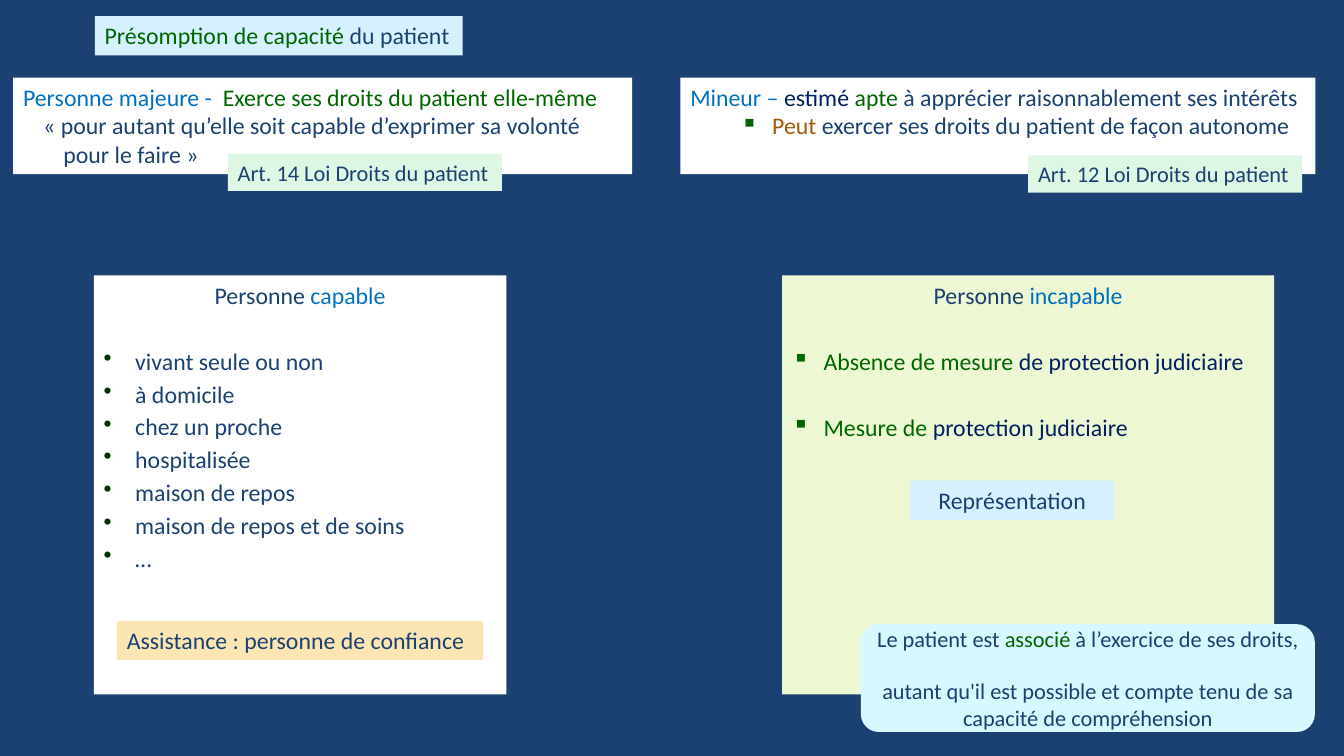
import pptx
import pptx.dml.color
import pptx.enum.shapes
import pptx.enum.text
import pptx.oxml
import pptx.oxml.ns
import pptx.util

Pt = pptx.util.Pt
SHAPE = pptx.enum.shapes.MSO_SHAPE
ALIGN = pptx.enum.text.PP_ALIGN
ANCHOR = pptx.enum.text.MSO_ANCHOR
FIT = pptx.enum.text.MSO_AUTO_SIZE

NAVY, BLUE, GREEN, INK, BROWN = "1A4171", "0070C0", "006600", "002060", "A3580D"
WHITE, SKY, MINT, LIME, SAND, AQUA = "FFFFFF", "D6F0FF", "DEF6E4", "EDF7D3", "FBE6B3", "D7F8FF"
BULLET_INDENT = 22.5
LIST_GAP = 3
WIDE_GAP = 27


def apply_format(target, values):
    for name, value in values.items():
        setattr(target, name, value)


def set_colour(colour_format, colour):
    colour_format.rgb = pptx.dml.color.RGBColor.from_string(colour)


def paint(fill, colour):
    fill.solid()
    set_colour(fill.fore_color, colour)


def line(*runs, align=ALIGN.LEFT, before=0, level=0, indent=(0, 0), bullet=None):
    return {
        "runs": runs,
        "format": {"alignment": align, "space_before": Pt(before), "level": level},
        "indent": indent,
        "bullet": bullet,
    }


def item(*runs, bullet, before=LIST_GAP, left=BULLET_INDENT, level=0):
    return line(*runs, before=before, level=level, indent=(left, -BULLET_INDENT), bullet=bullet)


def set_indent(paragraph, left, first):
    properties = paragraph._p.get_or_add_pPr()
    properties.set("marL", str(Pt(left)))
    properties.set("indent", str(Pt(first)))


def set_bullet(paragraph, character, colour):
    namespace = pptx.oxml.ns.nsdecls("a")
    properties = paragraph._p.get_or_add_pPr()
    for xml in (
        f'<a:buClr {namespace}><a:srgbClr val="{colour}"/></a:buClr>',
        f'<a:buChar {namespace} char="{character}"/>',
    ):
        properties.append(pptx.oxml.parse_xml(xml))


def write_line(paragraph, content, size):
    apply_format(paragraph, content["format"])
    set_indent(paragraph, *content["indent"])
    if content["bullet"]:
        set_bullet(paragraph, *content["bullet"])
    for text, colour in content["runs"]:
        run = paragraph.add_run()
        run.text = text
        apply_format(run.font, {"name": "Calibri", "size": Pt(size)})
        set_colour(run.font.color, colour)


def add_box(slide, bounds, colour, lines, size=17, wrap=True,
            kind=SHAPE.RECTANGLE, anchor=ANCHOR.TOP, fit=FIT.SHAPE_TO_FIT_TEXT):
    shape = slide.shapes.add_shape(kind, *map(Pt, bounds))
    shape.shadow.inherit = False
    paint(shape.fill, colour)
    shape.line.fill.background()
    frame = shape.text_frame
    apply_format(frame, {"word_wrap": wrap, "auto_size": fit, "vertical_anchor": anchor})
    for index, content in enumerate(lines):
        paragraph = frame.add_paragraph() if index else frame.paragraphs[0]
        write_line(paragraph, content, size)


def add_label(slide, bounds, colour, *runs, size=17):
    add_box(slide, bounds, colour, [line(*runs)], size=size, wrap=False)


def add_presumption(slide):
    add_label(slide, (67.7, 11.5, 262.8, 28.1), SKY,
              ("Présomption de capacité ", GREEN), ("du patient", NAVY))
    add_box(slide, (9.4, 55.4, 442.1, 69.1), WHITE, [
        line(("Personne majeure -  ", BLUE), ("Exerce ses droits du patient elle-même", GREEN)),
        line(("« pour autant qu’elle soit capable d’exprimer sa volonté pour le faire »", NAVY),
             indent=(28.8, -14.4)),
    ])


def add_capable(slide):
    situations = ("vivant seule ou non", "à domicile", "chez un proche", "hospitalisée",
                  "maison de repos", "maison de repos et de soins", "…")
    lines = [line(("Personne ", NAVY), ("capable", BLUE), align=ALIGN.CENTER)]
    for index, situation in enumerate(situations):
        lines.append(item((situation, NAVY), bullet=("•", "003300"),
                          before=LIST_GAP if index else WIDE_GAP))
    add_box(slide, (67, 196.6, 294.8, 299.3), WHITE, lines)
    add_label(slide, (83.5, 443.5, 261.4, 28.1), SAND,
              ("Assistance : personne de confiance", NAVY))


def add_incapable(slide):
    square = ("▪", GREEN)
    add_box(slide, (558.7, 196.6, 351.4, 299.3), LIME, [
        line(("Personne ", NAVY), ("incapable", BLUE), align=ALIGN.CENTER),
        item(("Absence de mesure ", GREEN), ("de protection judiciaire", INK),
             bullet=square, before=WIDE_GAP),
        item(("Mesure de ", GREEN), ("protection judiciaire", INK),
             bullet=square, before=WIDE_GAP),
    ])
    add_box(slide, (650.2, 343.4, 145.4, 28.1), SKY,
            [line(("Représentation", NAVY), align=ALIGN.CENTER)])


def add_minor(slide):
    add_box(slide, (486, 55.4, 453.6, 69.1), WHITE, [
        line(("Mineur – ", BLUE), ("estimé ", INK), ("apte ", GREEN),
             ("à apprécier raisonnablement ses intérêts", NAVY)),
        item(("Peut ", BROWN), ("exercer ses droits du patient de façon autonome", NAVY),
             bullet=("▪", GREEN), before=0, left=58.5, level=1),
    ])


def add_association(slide):
    add_box(slide, (614.9, 445.9, 324.3, 77), AQUA, [
        line(("Le patient est ", NAVY), ("associé", GREEN),
             (" à l’exercice de ses droits,", NAVY), align=ALIGN.CENTER),
        line(("autant qu'il est possible et compte tenu de sa capacité de compréhension", NAVY),
             align=ALIGN.CENTER, before=18),
    ], size=16, kind=SHAPE.ROUNDED_RECTANGLE, anchor=ANCHOR.MIDDLE, fit=FIT.NONE)


def main():
    presentation = pptx.Presentation()
    apply_format(presentation, {"slide_width": Pt(960), "slide_height": Pt(540)})
    slide = presentation.slides.add_slide(presentation.slide_layouts[6])
    paint(slide.background.fill, NAVY)
    add_presumption(slide)
    add_capable(slide)
    add_incapable(slide)
    add_minor(slide)
    for article, left, top in ((14, 162.7, 109.8), (12, 734.4, 111.1)):
        add_label(slide, (left, top, 195.8, 26.6), MINT,
                  (f"Art. {article} Loi Droits du patient", NAVY), size=16)
    add_association(slide)
    presentation.save("out.pptx")


if __name__ == "__main__":
    main()
